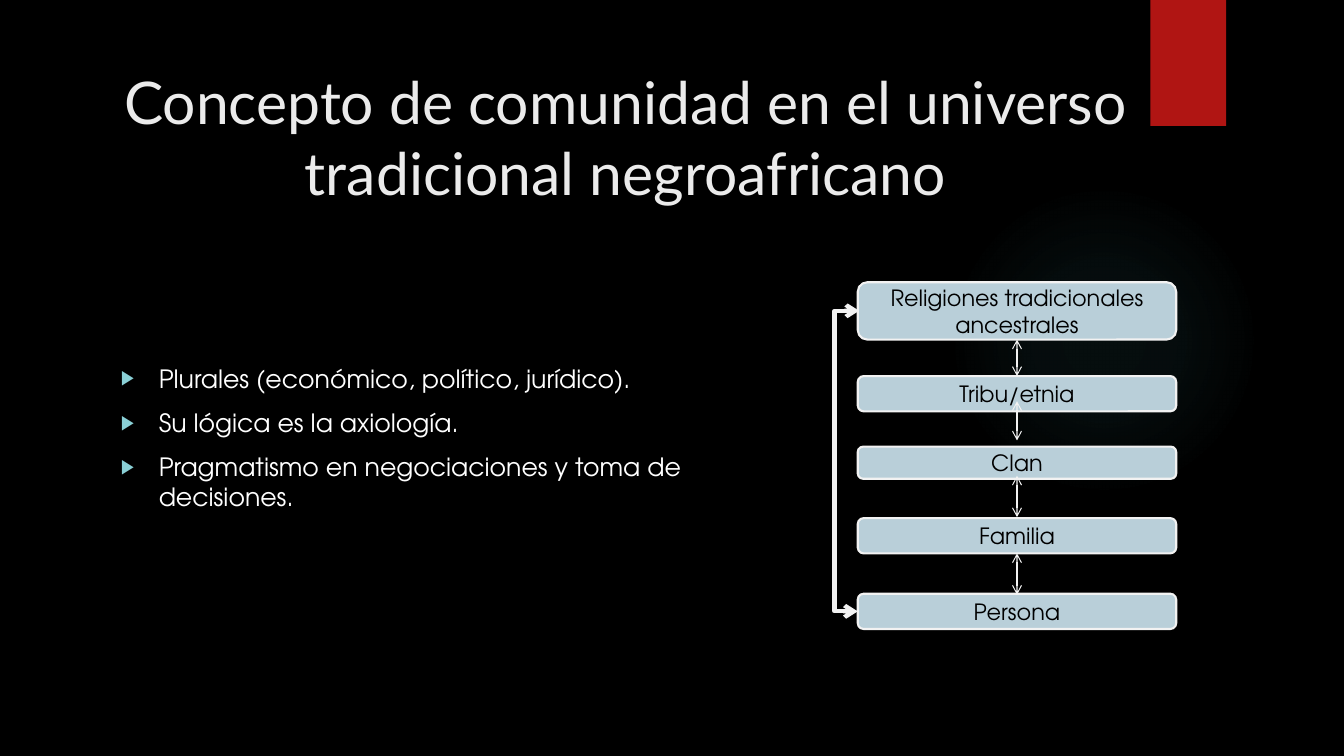
from lxml import etree
from pptx import Presentation
from pptx.dml.color import RGBColor
from pptx.enum.shapes import MSO_CONNECTOR, MSO_SHAPE
from pptx.enum.text import MSO_ANCHOR, MSO_AUTO_SIZE, PP_ALIGN
from pptx.oxml import parse_xml
from pptx.oxml.ns import nsdecls, qn
from pptx.util import Pt

ROUND, RECT, OVAL = MSO_SHAPE.ROUNDED_RECTANGLE, MSO_SHAPE.RECTANGLE, MSO_SHAPE.OVAL
LINE, ELBOW = MSO_CONNECTOR.STRAIGHT, MSO_CONNECTOR.ELBOW
TOP, MIDDLE = MSO_ANCHOR.TOP, MSO_ANCHOR.MIDDLE
LEFT, CENTER = PP_ALIGN.LEFT, PP_ALIGN.CENTER
NO_FIT = MSO_AUTO_SIZE.NONE

COLORS = {
    "back": "000000", "glow": "50B9C1", "tab": "B01513", "title": "EBEBEB",
    "body": "FFFFFF", "bullet": "8AD0D6", "box": "B9CFD9", "line": "F2F2F2",
    "label": "000000",
}
SERIF, SANS = "Lato", "TeX Gyre Adventor"

TITLE = "Concepto de comunidad en el universo tradicional negroafricano"
POINTS = [
    "Plurales (económico, político, jurídico).",
    "Su lógica es la axiología.",
    "Pragmatismo en negociaciones y toma de decisiones.",
]
BOX_LEFT, BOX_WIDTH = 612.7, 227.5
LEVELS = [
    ("Religiones tradicionales ancestrales", 201.6, 41),
    ("Tribu/etnia", 268.6, 25.2),
    ("Clan", 319, 23),
    ("Familia", 370.1, 25.2),
    ("Persona", 424.1, 25.2),
]
ARROWS = [(242.6, 268.6), (286.6, 314.6), (339.8, 369.4), (395.3, 424.8)]


def color(name):
    return RGBColor.from_string(COLORS[name])


def place(shape, left, top, width, height):
    shape.left, shape.top = Pt(left), Pt(top)
    shape.width, shape.height = Pt(width), Pt(height)


def style(par, face, size, tint, align):
    par.alignment = align
    par.font.name = face
    par.font.size = Pt(size)
    par.font.color.rgb = color(tint)


def add_shape(slide, kind, left, top, width, height, fill):
    shape = slide.shapes.add_shape(kind, Pt(left), Pt(top), Pt(width), Pt(height))
    shape.shadow.inherit = False
    shape.fill.solid()
    shape.fill.fore_color.rgb = color(fill)
    shape.line.fill.background()
    return shape


def add_glow(slide):
    oval = add_shape(slide, OVAL, 677.5, 131.8, 221.8, 221.8, "glow")
    stops = "".join(
        f'<a:gs pos="{pos * 1000}"><a:srgbClr val="{COLORS["glow"]}">'
        f'<a:alpha val="{alpha * 1000}"/></a:srgbClr></a:gs>'
        for pos, alpha in [(0, 7), (36, 6), (69, 0)]
    )
    grad = parse_xml(
        f'<a:gradFill {nsdecls("a")}><a:gsLst>{stops}</a:gsLst><a:path path="circle">'
        '<a:fillToRect l="50000" t="50000" r="50000" b="50000"/></a:path></a:gradFill>'
    )
    props = oval.element.spPr
    props.replace(props.find(qn("a:solidFill")), grad)


def add_title(slide):
    title = slide.shapes.title
    place(title, 76.3, 42.5, 740.9, 110.2)
    frame = title.text_frame
    frame.text = TITLE
    frame.word_wrap = True
    frame.auto_size = NO_FIT
    frame.vertical_anchor = MIDDLE
    style(frame.paragraphs[0], SERIF, 42, "title", CENTER)


def add_bullet(par):
    props = par._p.get_or_add_pPr()
    props.set("marL", str(Pt(27)))
    props.set("indent", str(Pt(-27)))
    tint = etree.SubElement(props, qn("a:buClr"))
    etree.SubElement(tint, qn("a:srgbClr"), val=COLORS["bullet"])
    etree.SubElement(props, qn("a:buSzPct"), val="80000")
    etree.SubElement(props, qn("a:buChar"), char="▶")


def add_list(slide):
    body = slide.placeholders[1]
    place(body, 79.2, 255.6, 469.4, 128.2)
    frame = body.text_frame
    frame.text = "\n".join(POINTS)
    frame.word_wrap = True
    frame.auto_size = NO_FIT
    frame.vertical_anchor = TOP
    for i, par in enumerate(frame.paragraphs):
        add_bullet(par)
        par.space_before = Pt(10 if i else 0)
        style(par, SANS, 18, "body", LEFT)


def add_box(slide, text, top, height):
    box = add_shape(slide, ROUND, BOX_LEFT, top, BOX_WIDTH, height, "box")
    box.line.color.rgb = color("line")
    box.line.width = Pt(1.5)
    frame = box.text_frame
    frame.text = text
    frame.word_wrap = True
    frame.vertical_anchor = MIDDLE
    style(frame.paragraphs[0], SANS, 16, "label", CENTER)


def add_arrow(slide, kind, start, end, width):
    arrow = slide.shapes.add_connector(kind, *map(Pt, start + end))
    arrow.line.color.rgb = color("line")
    arrow.line.width = Pt(width)
    line = arrow.line._get_or_add_ln()
    for tip in ("a:headEnd", "a:tailEnd"):
        etree.SubElement(line, qn(tip), type="arrow")
    etree.SubElement(arrow._element.spPr, qn("a:effectLst"))
    return arrow


def add_loop(slide):
    loop = add_arrow(slide, ELBOW, (613.7, 222), (612.7, 436.7), 3)
    guides = loop._element.spPr.find(qn("a:prstGeom")).get_or_add_avLst()
    etree.SubElement(guides, qn("a:gd"), name="adj1", fmla="val 1780000")


def main():
    deck = Presentation()
    deck.slide_width, deck.slide_height = Pt(960), Pt(540)
    slide = deck.slides.add_slide(deck.slide_layouts[1])
    slide.background.fill.solid()
    slide.background.fill.fore_color.rgb = color("back")
    add_glow(slide)
    add_shape(slide, RECT, 821.8, 0, 54, 90, "tab")
    add_title(slide)
    add_list(slide)
    for level in LEVELS:
        add_box(slide, *level)
    add_loop(slide)
    mid = BOX_LEFT + BOX_WIDTH / 2
    for top, bottom in ARROWS:
        add_arrow(slide, LINE, (mid, top), (mid, bottom), 0.75)
    deck.save("out.pptx")


if __name__ == "__main__":
    main()
